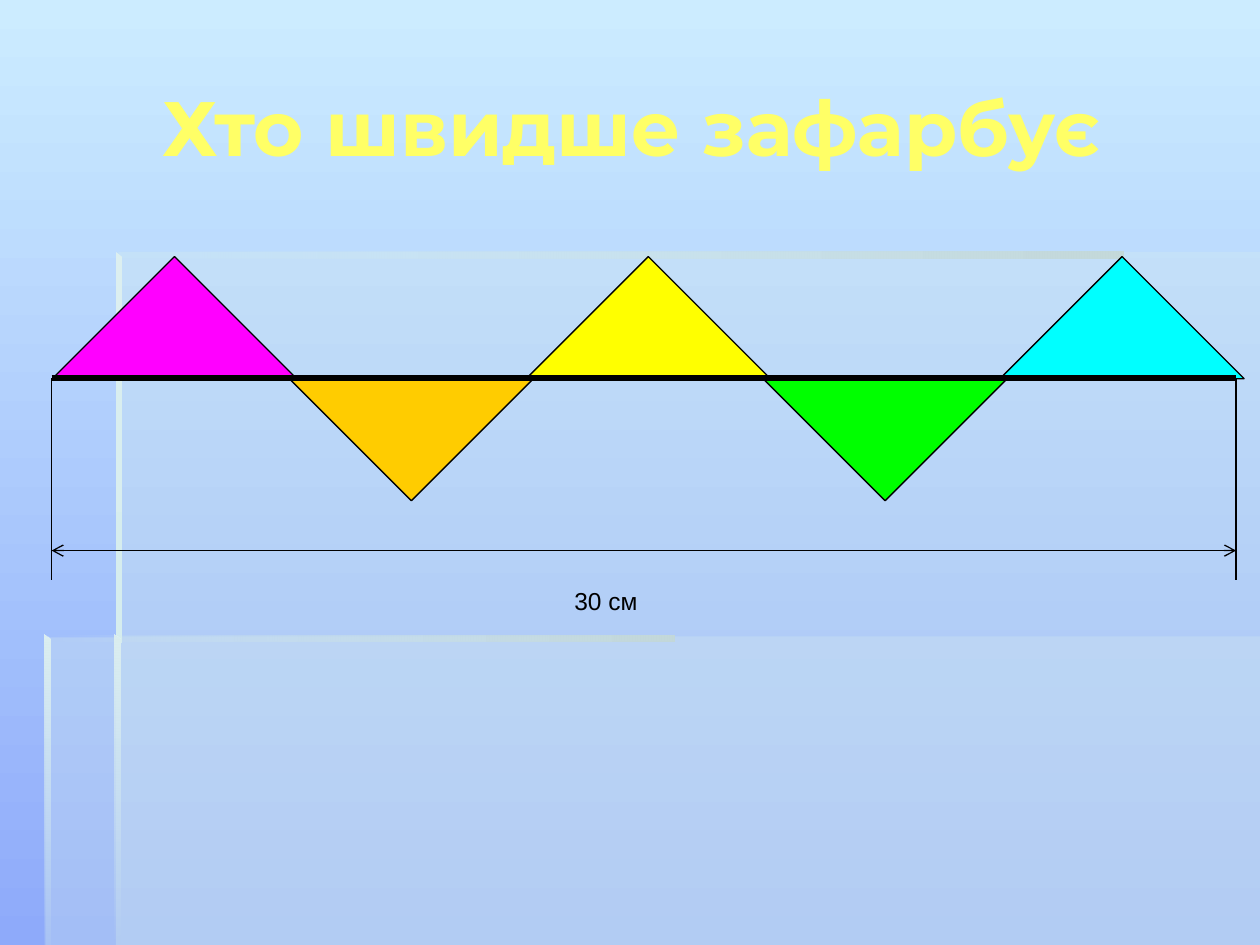
from pptx import Presentation
from pptx.dml.color import RGBColor
from pptx.enum.shapes import MSO_CONNECTOR, MSO_SHAPE
from pptx.enum.text import MSO_ANCHOR, PP_ALIGN
from pptx.oxml.ns import qn
from pptx.util import Inches, Pt
from lxml.etree import SubElement

SKY = RGBColor(0xCC, 0xEC, 0xFF)
BLUE = RGBColor(0x8E, 0xAA, 0xFA)
PALE = RGBColor(0xD6, 0xED, 0xEE)
LIGHT = RGBColor(0xDC, 0xEF, 0xF0)
SHADE = RGBColor(0xC4, 0xD9, 0xDA)
TITLE_YELLOW = RGBColor(0xFF, 0xFF, 0x66)
BLACK = RGBColor(0x00, 0x00, 0x00)
MAGENTA = RGBColor(0xFF, 0x00, 0xFF)
ORANGE = RGBColor(0xFF, 0xCC, 0x00)
YELLOW = RGBColor(0xFF, 0xFF, 0x00)
GREEN = RGBColor(0x00, 0xFF, 0x00)
CYAN = RGBColor(0x00, 0xFF, 0xFF)

LEFT, RIGHT, AXIS_Y = 0.41, 9.81, 3
DOWN, ACROSS = 270, 0


def set_gradient(fill, colors, angle):
    fill.gradient()
    fill.gradient_angle = angle
    for stop, color, position in zip(fill.gradient_stops, colors, (0, 1)):
        stop.color.rgb = color
        stop.position = position


def set_alphas(sp, alphas):
    for color, alpha in zip(sp._element.spPr.iter(qn("a:srgbClr")), alphas):
        if alpha < 100:
            SubElement(color, qn("a:alpha")).set("val", str(alpha * 1000))


def add_outline(s, points, colors, alphas, angle=None):
    start, *rest = [(Inches(x), Inches(y)) for x, y in points]
    builder = s.shapes.build_freeform(*start, scale=1.0)
    builder.add_line_segments(rest, close=True)
    sp = builder.convert_to_shape()
    sp.shadow.inherit = False
    sp.line.fill.background()
    if angle is None:
        sp.fill.solid()
        sp.fill.fore_color.rgb = colors[0]
    else:
        set_gradient(sp.fill, colors, angle)
    set_alphas(sp, alphas)


def add_bar(s, x, y, width):
    points = [(x, y), (x, y + 0.05), (x + width, y + 0.05), (x + width, y)]
    add_outline(s, points, (PALE, SHADE), (0, 100), ACROSS)


def add_bevel(s, x, top, bottom, end_alpha):
    points = [(x, top), (x, bottom), (x + 0.05, bottom), (x + 0.05, top + 0.04)]
    add_outline(s, points, (LIGHT, PALE), (100, end_alpha), DOWN)


def add_backdrop(s):
    set_gradient(s.background.fill, (SKY, BLUE), DOWN)
    add_outline(s, [(0.92, 5.05), (0.92, 7.5), (10, 7.5), (10, 5.05)], (PALE,), (30,))
    add_outline(
        s,
        [(0.94, 5.06), (0.36, 5.06), (0.36, 7.5), (10, 7.5), (10, 2), (0.94, 2)],
        (PALE,),
        (30,),
    )
    add_bar(s, 0.92, 2, 8)
    add_bevel(s, 0.92, 2, 5.1, 100)
    add_bevel(s, 0.91, 5.04, 7.5, 0)
    add_bar(s, 0.35, 5.04, 5)
    add_bevel(s, 0.35, 5.04, 7.5, 10)


def add_triangle(s, index, color):
    left = 0.7 + index * (RIGHT - LEFT) / 5
    sp = s.shapes.add_shape(
        MSO_SHAPE.RIGHT_TRIANGLE, Inches(left), Inches(2.32), Inches(1.37), Inches(1.37)
    )
    sp.rotation = 315 if index % 2 else 135
    sp.shadow.inherit = False
    sp.fill.solid()
    sp.fill.fore_color.rgb = color
    sp.line.color.rgb = BLACK
    sp.line.width = Pt(0.75)


def add_line(s, x1, y1, x2, y2, width=0.75, arrows=False):
    line = s.shapes.add_connector(
        MSO_CONNECTOR.STRAIGHT, Inches(x1), Inches(y1), Inches(x2), Inches(y2)
    )
    line.line.color.rgb = BLACK
    line.line.width = Pt(width)
    if arrows:
        ln = line.line._get_or_add_ln()
        for end in ("a:headEnd", "a:tailEnd"):
            SubElement(ln, qn(end)).set("type", "arrow")
    SubElement(line._element.spPr, qn("a:effectLst"))


def add_text(s, text, left, top, width, height, *, font, size, color, bold=False,
             align=PP_ALIGN.LEFT, anchor=MSO_ANCHOR.TOP):
    sp = s.shapes.add_textbox(Inches(left), Inches(top), Inches(width), Inches(height))
    tf = sp.text_frame
    tf.word_wrap = True
    tf.vertical_anchor = anchor
    p = tf.paragraphs[0]
    p.alignment = align
    r = p.add_run()
    r.text = text
    r.font.name = font
    r.font.size = Pt(size)
    r.font.bold = bold
    r.font.color.rgb = color


def main():
    prs = Presentation()
    prs.slide_width, prs.slide_height = Inches(10), Inches(7.5)
    s = prs.slides.add_slide(prs.slide_layouts[6])
    add_backdrop(s)
    add_text(s, "Хто швидше зафарбує", 0.43, 0.21, 9.17, 1.57, font="Montserrat",
             size=44, color=TITLE_YELLOW, bold=True, align=PP_ALIGN.CENTER,
             anchor=MSO_ANCHOR.MIDDLE)
    for index, color in ((1, ORANGE), (3, GREEN), (0, MAGENTA), (4, CYAN), (2, YELLOW)):
        add_triangle(s, index, color)
    add_line(s, LEFT, AXIS_Y, RIGHT, AXIS_Y, width=3)
    for x in (LEFT, RIGHT):
        add_line(s, x, AXIS_Y, x, 4.6)
    add_line(s, LEFT, 4.37, RIGHT, 4.37, arrows=True)
    add_text(s, "30 см", 4.46, 4.6, 1.3, 0.68, font="Arial", size=14, color=BLACK)
    prs.save("out.pptx")


if __name__ == "__main__":
    main()
